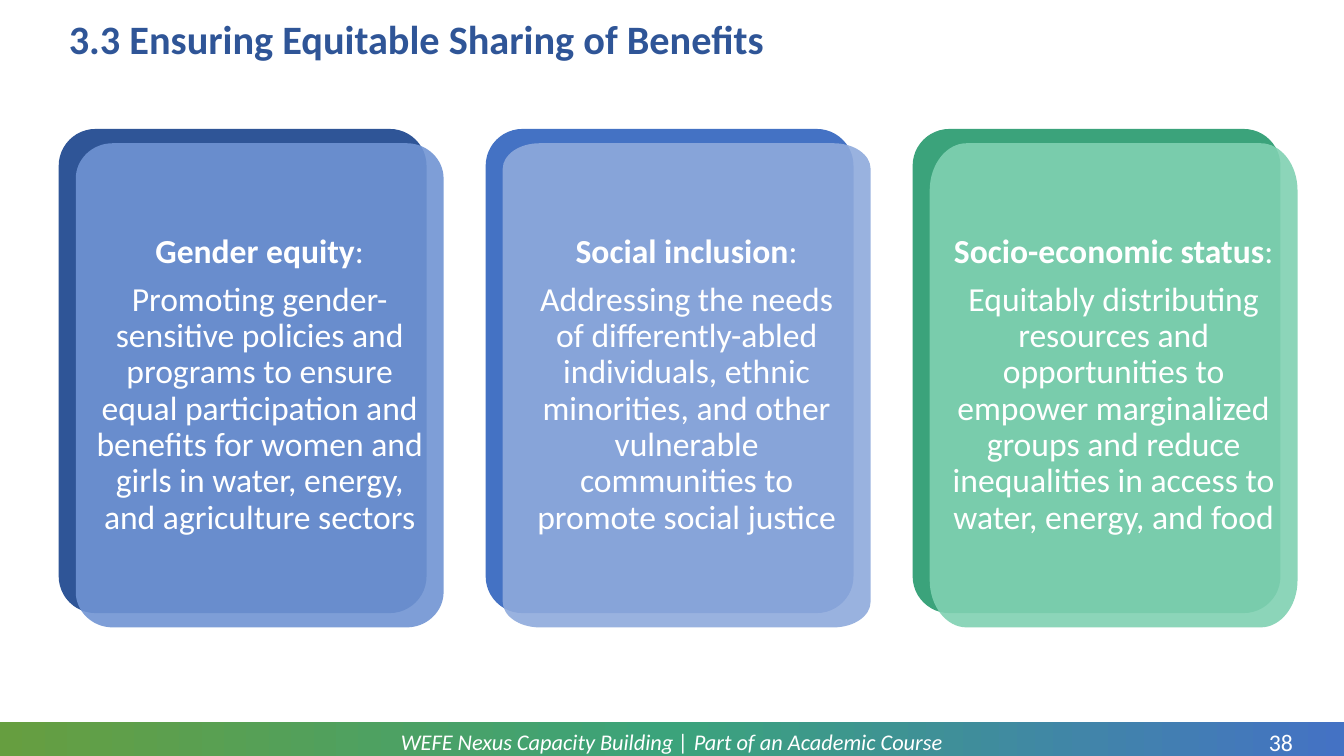
import copy

import lxml.etree
import pptx
import pptx.dml.color
import pptx.enum.shapes
import pptx.enum.text
import pptx.oxml.ns
import pptx.util

Cm = pptx.util.Cm
Pt = pptx.util.Pt
RGBColor = pptx.dml.color.RGBColor
MSO_SHAPE = pptx.enum.shapes.MSO_SHAPE
MSO_ANCHOR = pptx.enum.text.MSO_ANCHOR
MSO_AUTO_SIZE = pptx.enum.text.MSO_AUTO_SIZE
PP_ALIGN = pptx.enum.text.PP_ALIGN
qn = pptx.oxml.ns.qn

WHITE = RGBColor(0xFF, 0xFF, 0xFF)
NAVY = RGBColor(0x2F, 0x55, 0x97)
BLUE = RGBColor(0x44, 0x72, 0xC4)
GREEN = RGBColor(0x3B, 0xA3, 0x7B)
LEAF = RGBColor(0x66, 0x9E, 0x40)
SOFT_NAVY = RGBColor(0x70, 0x94, 0xD3)
SOFT_BLUE = RGBColor(0x8F, 0xAA, 0xDC)
SOFT_GREEN = RGBColor(0x80, 0xD1, 0xB2)

CARDS = [
    (NAVY, SOFT_NAVY, 0.89, 0.51, "Gender equity", ":",
     "Promoting gender-sensitive policies and programs to ensure equal participation "
     "and benefits for women and girls in water, energy, and agriculture sectors"),
    (BLUE, SOFT_BLUE, 0.64, 0.5, "Social inclusion", ":",
     "Addressing the needs of differently-abled individuals, ethnic minorities, "
     "and other vulnerable communities to promote social justice"),
    (GREEN, SOFT_GREEN, 1.19, 0.53, "Socio-economic status", ": ",
     "Equitably distributing resources and opportunities to empower marginalized groups "
     "and reduce inequalities in access to water, energy, and food"),
]
CARD_LEFT, CARD_TOP, CARD_PITCH = 1.48, 3.25, 10.76
CARD_WIDTH, CARD_HEIGHT = 9.27, 12.2
SHIFT_X, SHIFT_Y = 0.43, 0.36
CORNER_WIDTH = 0.93
CURVE_RATIO = 0.55


def add_run(paragraph, text, size, color=WHITE, bold=False, italic=False):
    run = paragraph.add_run()
    run.text = text
    run.font.name = "Calibri"
    run.font.size = Pt(size)
    run.font.color.rgb = color
    run.font.bold = bold
    run.font.italic = italic


def add_rounded_freeform(shapes, left, top, corner_height):
    right, bottom = left + CARD_WIDTH, top + CARD_HEIGHT
    inner_left, inner_right = left + CORNER_WIDTH, right - CORNER_WIDTH
    inner_top, inner_bottom = top + corner_height, bottom - corner_height
    outline = [(Cm(x), Cm(y)) for x, y in (
        (left, inner_top), (inner_left, top), (inner_right, top), (right, inner_top),
        (right, inner_bottom), (inner_right, bottom), (inner_left, bottom), (left, inner_bottom))]
    builder = shapes.build_freeform(*outline[0])
    builder.add_line_segments(outline[1:], close=True)
    shape = builder.convert_to_shape()
    path_element = next(shape._element.iter(qn("a:path")))
    corners = [(0, 0), (Cm(CARD_WIDTH), 0), (Cm(CARD_WIDTH), Cm(CARD_HEIGHT)), (0, Cm(CARD_HEIGHT))]
    points = [(int(point.get("x")), int(point.get("y"))) for point in path_element.iter(qn("a:pt"))]
    for number, line in enumerate(path_element.findall(qn("a:lnTo"))[::2]):
        start, end = points[2 * number], points[2 * number + 1]
        controls = [tuple(round(a + CURVE_RATIO * (b - a)) for a, b in zip(point, corners[number]))
                    for point in (start, end)]
        curve = lxml.etree.Element(qn("a:cubicBezTo"))
        for x, y in (*controls, end):
            lxml.etree.SubElement(curve, qn("a:pt"), x=str(x), y=str(y))
        path_element.replace(line, curve)
    return shape


presentation = pptx.Presentation()
presentation.slide_width = Cm(33.87)
presentation.slide_height = Cm(19.05)
slide = presentation.slides.add_slide(presentation.slide_layouts[5])

footer_bar = slide.shapes.add_shape(MSO_SHAPE.RECTANGLE, 0, Cm(18.19), Cm(33.87), Cm(0.96))
footer_bar.shadow.inherit = False
footer_bar.line.fill.background()
footer_bar.fill.gradient()
footer_bar.fill.gradient_angle = 0
stop_list = next(footer_bar._element.iter(qn("a:gsLst")))
stop_list.append(copy.deepcopy(stop_list[0]))
for stop, color, position in zip(footer_bar.fill.gradient_stops, (LEAF, GREEN, BLUE), (0, 0.5, 1)):
    stop.color.rgb = color
    stop.position = position

footer_texts = [
    ("WEFE Nexus Capacity Building | Part of an Academic Course", 2.34, 18.23, 29.18, 0.91, 16, True),
    ("38", 31.52, 18.34, 1.52, 0.74, 17, False),
]
for text, left, top, width, height, size, italic in footer_texts:
    footer_box = slide.shapes.add_textbox(Cm(left), Cm(top), Cm(width), Cm(height))
    frame = footer_box.text_frame
    frame.word_wrap = True
    frame.vertical_anchor = MSO_ANCHOR.MIDDLE
    frame.margin_left = frame.margin_right = frame.margin_top = frame.margin_bottom = 0
    paragraph = frame.paragraphs[0]
    paragraph.alignment = PP_ALIGN.CENTER
    add_run(paragraph, text, size, italic=italic)

title = slide.shapes.title
title.left, title.top, title.width, title.height = Cm(1.48), Cm(0.33), Cm(30.86), Cm(1.42)
title.text_frame.auto_size = MSO_AUTO_SIZE.NONE
title.text_frame.vertical_anchor = MSO_ANCHOR.MIDDLE
paragraph = title.text_frame.paragraphs[0]
paragraph.alignment = PP_ALIGN.LEFT
paragraph.line_spacing = 0.9
add_run(paragraph, "3.3 Ensuring Equitable Sharing of Benefits", 28.8, NAVY, bold=True)

for index, (back_color, front_color, corner_height, margin, heading, colon, body) in enumerate(CARDS):
    left = CARD_LEFT + index * CARD_PITCH
    card = slide.shapes.add_group_shape()

    back = card.shapes.add_shape(MSO_SHAPE.ROUNDED_RECTANGLE, Cm(left), Cm(CARD_TOP),
                                 Cm(CARD_WIDTH), Cm(CARD_HEIGHT))
    back.adjustments[0] = 0.1
    front = add_rounded_freeform(card.shapes, left + SHIFT_X, CARD_TOP + SHIFT_Y, corner_height)
    for shape, color in ((back, back_color), (front, front_color)):
        shape.shadow.inherit = False
        shape.line.fill.background()
        shape.fill.solid()
        shape.fill.fore_color.rgb = color
    front_fill = front._element.spPr.find(qn("a:solidFill"))
    lxml.etree.SubElement(front_fill[0], qn("a:alpha"), val="90000")

    frame = front.text_frame
    frame.word_wrap = True
    frame.vertical_anchor = MSO_ANCHOR.MIDDLE
    frame.margin_left = frame.margin_right = frame.margin_top = frame.margin_bottom = Cm(margin)
    heading_paragraph, body_paragraph = frame.paragraphs[0], frame.add_paragraph()
    for paragraph in (heading_paragraph, body_paragraph):
        paragraph.alignment = PP_ALIGN.CENTER
        paragraph.line_spacing = 0.9
        paragraph.space_after = Pt(8.4)
    add_run(heading_paragraph, heading, 24, bold=True)
    add_run(heading_paragraph, colon, 24)
    add_run(body_paragraph, body, 24)

presentation.save("out.pptx")
